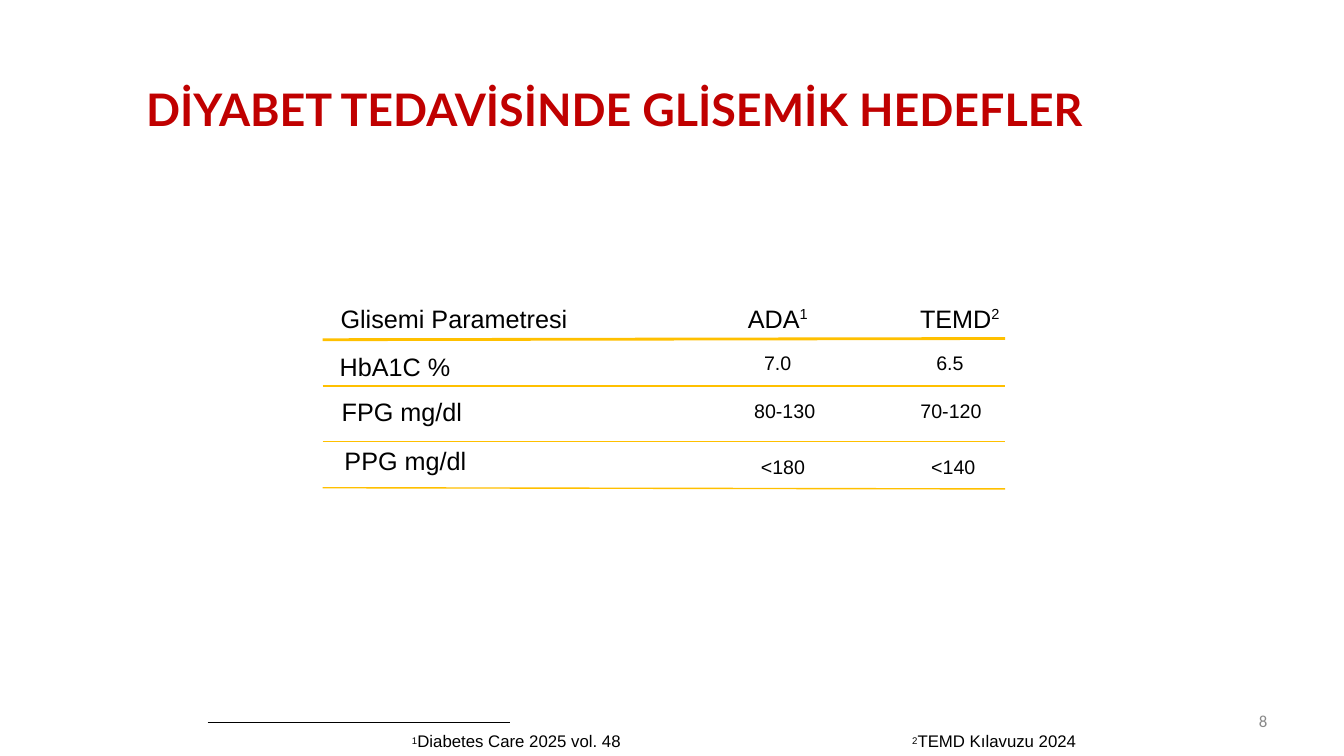
"""Build the slide on glycaemic targets in diabetes treatment."""
from lxml import etree
from pptx import Presentation
from pptx import util as u
from pptx.dml.color import RGBColor
from pptx.enum import shapes, text
from pptx.oxml import ns

BLACK = RGBColor(0x00, 0x00, 0x00)
RED = RGBColor(0xC0, 0x00, 0x00)
GOLD = RGBColor(0xFF, 0xC0, 0x00)
GREY = RGBColor(0x89, 0x89, 0x89)

deck = Presentation()
deck.slide_width, deck.slide_height = u.Cm(33.86), u.Cm(19.05)
page = deck.slides.add_slide(deck.slide_layouts[6])


def add_text(left, top, width, height, size, pieces, font="Arial", color=BLACK, tabs=()):
    """Place a text box; each piece is a wording with its baseline shift in percent."""
    box = page.shapes.add_textbox(u.Cm(left), u.Cm(top), u.Cm(width), u.Cm(height))
    box.text_frame.word_wrap = True
    para = box.text_frame.paragraphs[0]
    if tabs:
        tab_list = etree.SubElement(para._p.get_or_add_pPr(), ns.qn("a:tabLst"))
        for stop in tabs:
            etree.SubElement(tab_list, ns.qn("a:tab"), pos=str(u.Cm(stop)), algn="l")
    para.font.name, para.font.size = font, u.Pt(size)
    para.font.color.rgb = color
    for wording, shift in pieces:
        span = para.add_run()
        span.text = wording
        if shift:
            span._r.get_or_add_rPr().set("baseline", str(shift * 1000))
    return box


def add_rule(left, start, right, end, color, weight):
    """Draw a straight rule between two points."""
    rule = page.shapes.add_connector(
        shapes.MSO_CONNECTOR.STRAIGHT, u.Cm(left), u.Cm(start), u.Cm(right), u.Cm(end))
    rule.line.color.rgb, rule.line.width = color, u.Pt(weight)
    etree.SubElement(rule._element.spPr, ns.qn("a:effectLst"))


title = add_text(3.43, 1.93, 26.59, 1.63, 32,
                 [("DİYABET TEDAVİSİNDE GLİSEMİK HEDEFLER", 0)], "Lato", RED)
title.text_frame.paragraphs[0].font.bold = True

add_text(8.33, 7.52, 17.7, 1.02, 18,
         [("Glisemi Parametresi\tADA", 0), ("1", 36), ("\tTEMD", 0), ("2", 36)],
         tabs=(10.26, 14.6))

for label, left, top in (("HbA1C %", 8.31, 8.74), ("FPG mg/dl", 8.36, 9.86),
                         ("PPG mg/dl", 8.43, 11.1)):
    add_text(left, top, 4, 1.02, 18, [(label, 0)])

for value, left, top in (("7.0", 19.0, 8.71), ("6.5", 23.34, 8.71),
                         ("80-130", 18.75, 9.93), ("70-120", 22.94, 9.93)):
    add_text(left, top, 2.5, 0.86, 14, [(value, 0)])
add_text(18.92, 11.33, 8.48, 0.86, 14, [("<180\t<140", 0)], tabs=(4.29,))

for start, end, weight in ((8.56, 8.53, 2), (9.73, 9.73, 1), (11.13, 11.13, 1), (12.29, 12.32, 1)):
    add_rule(8.13, start, 25.32, end, GOLD, weight)

add_rule(5.23, 18.21, 12.85, 18.21, BLACK, 0.75)
for mark, source, left, width in (("1", "Diabetes Care 2025 vol. 48", 10.13, 12.6),
                                  ("2", "TEMD Kılavuzu 2024", 22.73, 11.1)):
    add_text(left, 18.29, width, 0.76, 12, [(mark, 16), (source, 0)])

number = add_text(24.28, 17.65, 7.9, 1.02, 12, [("8", 0)], "Calibri", GREY)
number.text_frame.vertical_anchor = text.MSO_ANCHOR.MIDDLE
number.text_frame.paragraphs[0].alignment = text.PP_ALIGN.RIGHT

deck.save("out.pptx")
